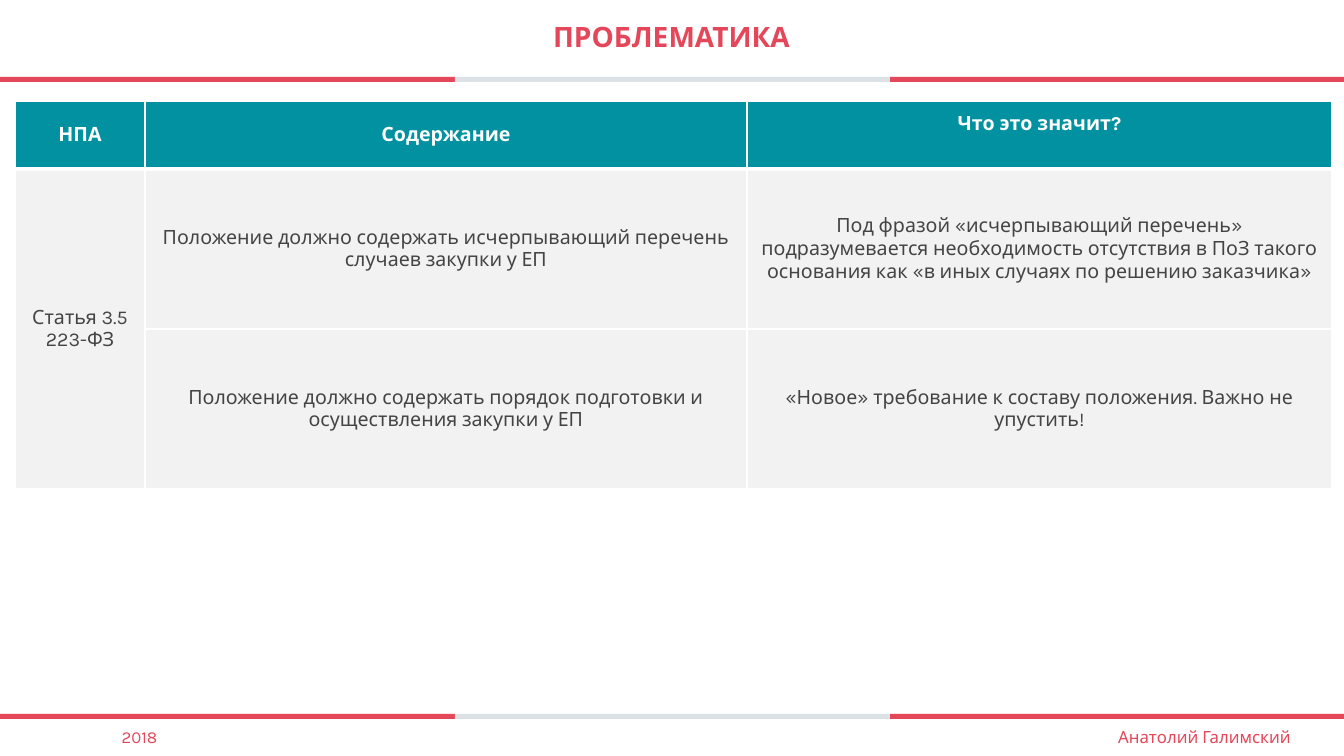
from lxml.etree import SubElement
from pptx import Presentation
from pptx.dml.color import RGBColor
from pptx.enum.shapes import MSO_SHAPE
from pptx.enum.text import MSO_ANCHOR, MSO_AUTO_SIZE, PP_ALIGN
from pptx.oxml import parse_xml
from pptx.oxml.ns import nsdecls, qn
from pptx.util import Pt

SCALE = 914400 / 100.8
COLORS = {"red": "E4465A", "silver": "DBE1E4", "teal": "0291A0",
          "pale": "F2F2F2", "gray": "444444", "white": "FFFFFF"}


def px(*lengths):
    return [round(length * SCALE) for length in lengths]


def write(text_frame, text, size, color, bold=False):
    text_frame.word_wrap = True
    paragraph = text_frame.paragraphs[0]
    paragraph.text = text
    paragraph.alignment = PP_ALIGN.CENTER
    font_format = {"name": "Karla", "size": Pt(size), "bold": bold}
    for attribute, value in font_format.items():
        setattr(paragraph.font, attribute, value)
    paragraph.font.color.rgb = RGBColor.from_string(COLORS[color])
    return paragraph


presentation = Presentation()
presentation.slide_width, presentation.slide_height = px(1344, 756)
slide = presentation.slides.add_slide(presentation.slide_layouts[5])

# Three-part rules above and below the content
for top in (77, 714):
    for left, width, color in ((0, 455, "red"), (890, 454, "red"), (455, 435, "silver")):
        bar = slide.shapes.add_shape(MSO_SHAPE.RECTANGLE, *px(left, top, width, 5))
        bar.shadow.inherit = False
        bar.fill.solid()
        bar.fill.fore_color.rgb = RGBColor.from_string(COLORS[color])
        bar.line.fill.background()

# Title
title = slide.shapes.title
title.left, title.top, title.width, title.height = px(216, 0, 911, 77)
title.text_frame.vertical_anchor = MSO_ANCHOR.MIDDLE
write(title.text_frame, "ПРОБЛЕМАТИКА", 20, "red", True).line_spacing = 0.9

# Table of requirements
ROWS = [
    ["НПА", "Содержание", "Что это значит?"],
    ["Статья 3.5 223-ФЗ",
     "Положение должно содержать исчерпывающий перечень случаев закупки у ЕП",
     "Под фразой «исчерпывающий перечень» подразумевается необходимость отсутствия "
     "в ПоЗ такого основания как «в иных случаях по решению заказчика»"],
    ["", "Положение должно содержать порядок подготовки и осуществления закупки у ЕП",
     "«Новое» требование к составу положения. Важно не упустить!"],
]
column_widths, row_heights = px(130, 602, 585), px(68, 160, 160)
table = slide.shapes.add_table(3, 3, *px(15, 101, 1317, 388)).table
for column, width in zip(table.columns, column_widths):
    column.width = width
for row, height in zip(table.rows, row_heights):
    row.height = height

for row_index, texts in enumerate(ROWS):
    header = row_index == 0
    for column_index, text in enumerate(texts):
        cell = table.cell(row_index, column_index)
        cell.vertical_anchor = MSO_ANCHOR.MIDDLE
        cell.fill.solid()
        cell.fill.fore_color.rgb = RGBColor.from_string(COLORS["teal" if header else "pale"])
        if text:
            write(cell.text_frame, text, 14, "white" if header else "gray", header)
        # White borders, thicker between the header and the body
        properties = cell._tc.get_or_add_tcPr()
        for position, side in enumerate("LRTB"):
            thick = (row_index, side) in ((0, "B"), (1, "T"))
            border = parse_xml(f'<a:ln{side} {nsdecls("a")} w="{Pt(3 if thick else 1)}"/>')
            fill = SubElement(border, qn("a:solidFill"))
            SubElement(fill, qn("a:srgbClr"), val=COLORS["white"])
            properties.insert(position, border)
table.cell(1, 0).merge(table.cell(2, 0))
# The last heading sits above the middle of its cell
table.cell(0, 2).margin_bottom = px(28)[0]

# Footer
for left, text in ((1065, "Анатолий Галимский"), (0, "2018")):
    footer = slide.shapes.add_textbox(*px(left, 722, 279, 30))
    footer.text_frame.auto_size = MSO_AUTO_SIZE.SHAPE_TO_FIT_TEXT
    write(footer.text_frame, text, 12, "red")

presentation.save("out.pptx")
